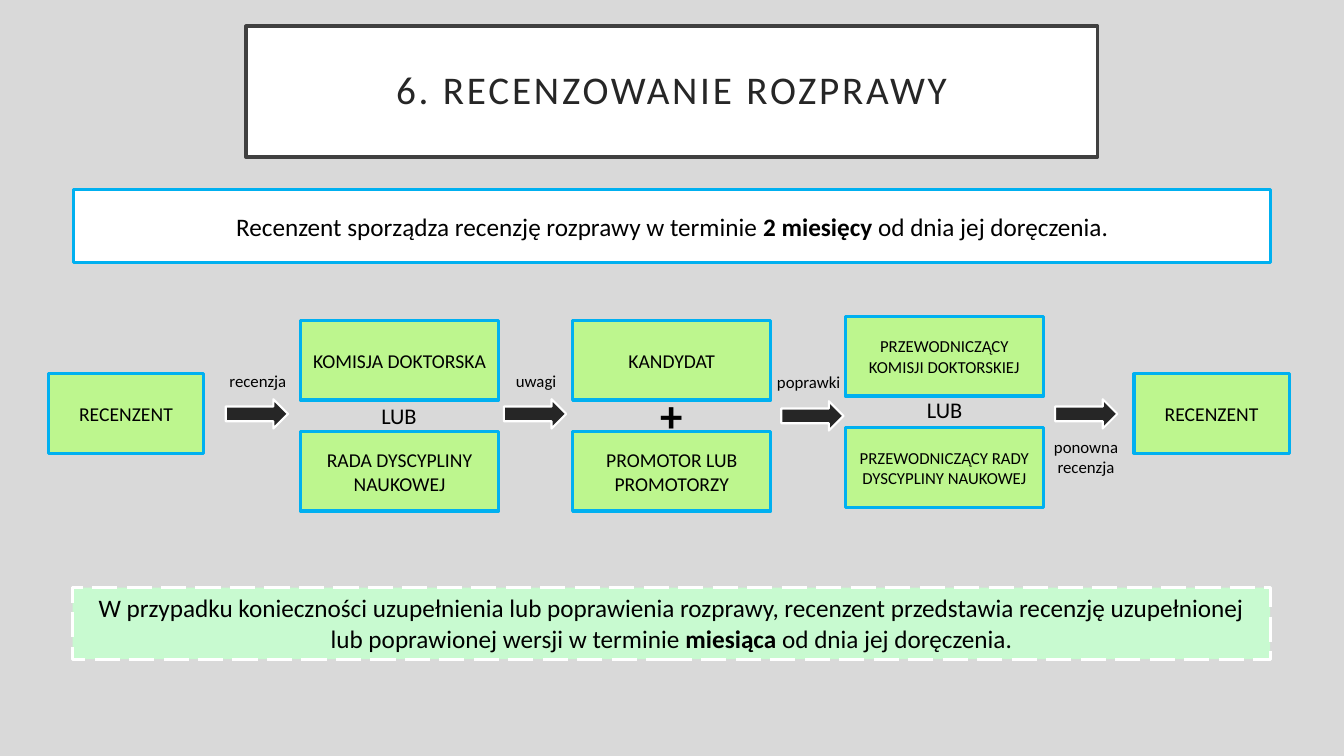
"""Build the slide on reviewing a doctoral dissertation."""
from lxml.etree import SubElement
from pptx import Presentation
from pptx.dml.color import RGBColor
from pptx.enum.dml import MSO_LINE
from pptx.enum.shapes import MSO_SHAPE as SHAPE
from pptx.enum.text import MSO_ANCHOR as ANCHOR, MSO_AUTO_SIZE as FIT, PP_ALIGN as ALIGN
from pptx.oxml.ns import qn
from pptx.util import Cm, Pt

BLACK, DARK, WHITE, BLUE = "000000", "262626", "FFFFFF", "00B0F0"
LIME, MINT, GREY, FRAME = "BDF68E", "C8FAD0", "D9D9D9", "404040"


def paint(fmt, color):
    fmt.solid()
    fmt.fore_color.rgb = RGBColor.from_string(color)


def write(tf, text, size=14, color=BLACK, anchor=ANCHOR.MIDDLE, fit=FIT.NONE,
          bold=False, spacing=None, outline=None):
    """Fill a frame with centred text; parts between asterisks are bold."""
    tf.word_wrap = True
    tf.auto_size = fit
    tf.vertical_anchor = anchor
    p = tf.paragraphs[0]
    p.alignment = ALIGN.CENTER
    for i, part in enumerate(text.split("*")):
        r = p.add_run()
        r.text = part
        r.font.name = "Calibri"
        r.font.size = Pt(size)
        r.font.bold = bold or i % 2 == 1
        paint(r.font.fill, color)
        rPr = r.font._element
        if spacing:
            rPr.set("spc", str(spacing * 100))
        if outline:
            ln = SubElement(rPr, qn("a:ln"), w=str(Pt(1.5)))
            fill = SubElement(ln, qn("a:solidFill"))
            SubElement(fill, qn("a:srgbClr"), val=outline)
            rPr.insert(0, ln)
    return p


class Deck:
    def __init__(self):
        self.prs = Presentation()
        self.prs.slide_width, self.prs.slide_height = Cm(33.87), Cm(19.05)
        self.s = self.prs.slides.add_slide(self.prs.slide_layouts[5])
        paint(self.s.background.fill, GREY)

    def style(self, sp, fill, line, width):
        paint(sp.fill, fill)
        paint(sp.line.fill, line)
        sp.line.width = Pt(width)

    def title(self, text, x, y, w, h):
        sp = self.s.shapes.title
        sp.left, sp.top, sp.width, sp.height = Cm(x), Cm(y), Cm(w), Cm(h)
        self.style(sp, WHITE, FRAME, 2.5)
        tf = sp.text_frame
        tf.margin_left = tf.margin_right = tf.margin_top = tf.margin_bottom = Cm(0.5)
        write(tf, text, size=28, color=DARK, spacing=2).line_spacing = 0.9

    def shape(self, kind, x, y, w, h, fill, line, width):
        sp = self.s.shapes.add_shape(kind, Cm(x), Cm(y), Cm(w), Cm(h))
        sp.shadow.inherit = False
        self.style(sp, fill, line, width)
        return sp

    def box(self, text, x, y, w=5, h=2, fill=LIME, line=BLUE, **fmt):
        sp = self.shape(SHAPE.RECTANGLE, x, y, w, h, fill, line, 2.25)
        write(sp.text_frame, text, **fmt)
        return sp

    def arrow(self, x, y):
        self.shape(SHAPE.RIGHT_ARROW, x, y, 1.57, 0.74, DARK, WHITE, 1.5)

    def label(self, text, x, y, w, h, **fmt):
        sp = self.s.shapes.add_textbox(Cm(x), Cm(y), Cm(w), Cm(h))
        write(sp.text_frame, text, anchor=ANCHOR.TOP, fit=FIT.SHAPE_TO_FIT_TEXT, **fmt)


def main():
    deck = Deck()
    deck.title("6. RECENZOWANIE ROZPRAWY", 6.2, 0.66, 21.46, 3.3)
    deck.box("Recenzent sporządza recenzję rozprawy w terminie *2 miesięcy *"
             "od dnia jej doręczenia.", 1.85, 4.78, 30.18, 1.83, fill=WHITE, size=18)

    for x in (1.22, 28.58):
        deck.box("RECENZENT", x, 9.42, w=3.91)
    stages = [
        (7.57, 8.08, 14, "KOMISJA DOKTORSKA", "RADA DYSCYPLINY NAUKOWEJ"),
        (14.43, 8.08, 14, "KANDYDAT", "PROMOTOR LUB PROMOTORZY"),
        (21.3, 7.98, 12, "PRZEWODNICZĄCY KOMISJI DOKTORSKIEJ",
         "PRZEWODNICZĄCY RADY DYSCYPLINY NAUKOWEJ"),
    ]
    for x, y, size, upper, lower in stages:
        deck.box(upper, x, y, size=size)
        deck.box(lower, x, y + 2.8, size=size)
    for x, y in ((9.14, 10), (22.89, 9.86)):
        deck.label("LUB", x, y, 1.83, 0.94, size=16)
    deck.label("+", 16, 9.65, 1.83, 1.63, size=32, bold=True, outline=WHITE)

    for x, y in ((5.69, 10.06), (12.7, 10.06), (19.69, 10.11), (26.59, 10.06)):
        deck.arrow(x, y)
    steps = [
        ("recenzja", 5.51, 9.22, 1.98, 0.76),
        ("uwagi", 12.52, 9.22, 1.98, 0.76),
        ("poprawki", 19.25, 9.25, 2.26, 0.76),
        ("ponowna recenzja", 26.24, 10.87, 2.26, 1.27),
    ]
    for step in steps:
        deck.label(*step, size=12)

    sp = deck.box("W przypadku konieczności uzupełnienia lub poprawienia rozprawy, "
                  "recenzent przedstawia recenzję uzupełnionej lub poprawionej wersji "
                  "w terminie *miesiąca *od dnia jej doręczenia.",
                  1.83, 14.81, 30.18, 1.8, fill=MINT, line=WHITE, size=18,
                  anchor=ANCHOR.TOP, fit=FIT.SHAPE_TO_FIT_TEXT)
    sp.line.dash_style = MSO_LINE.LONG_DASH
    deck.prs.save("out.pptx")


if __name__ == "__main__":
    main()
